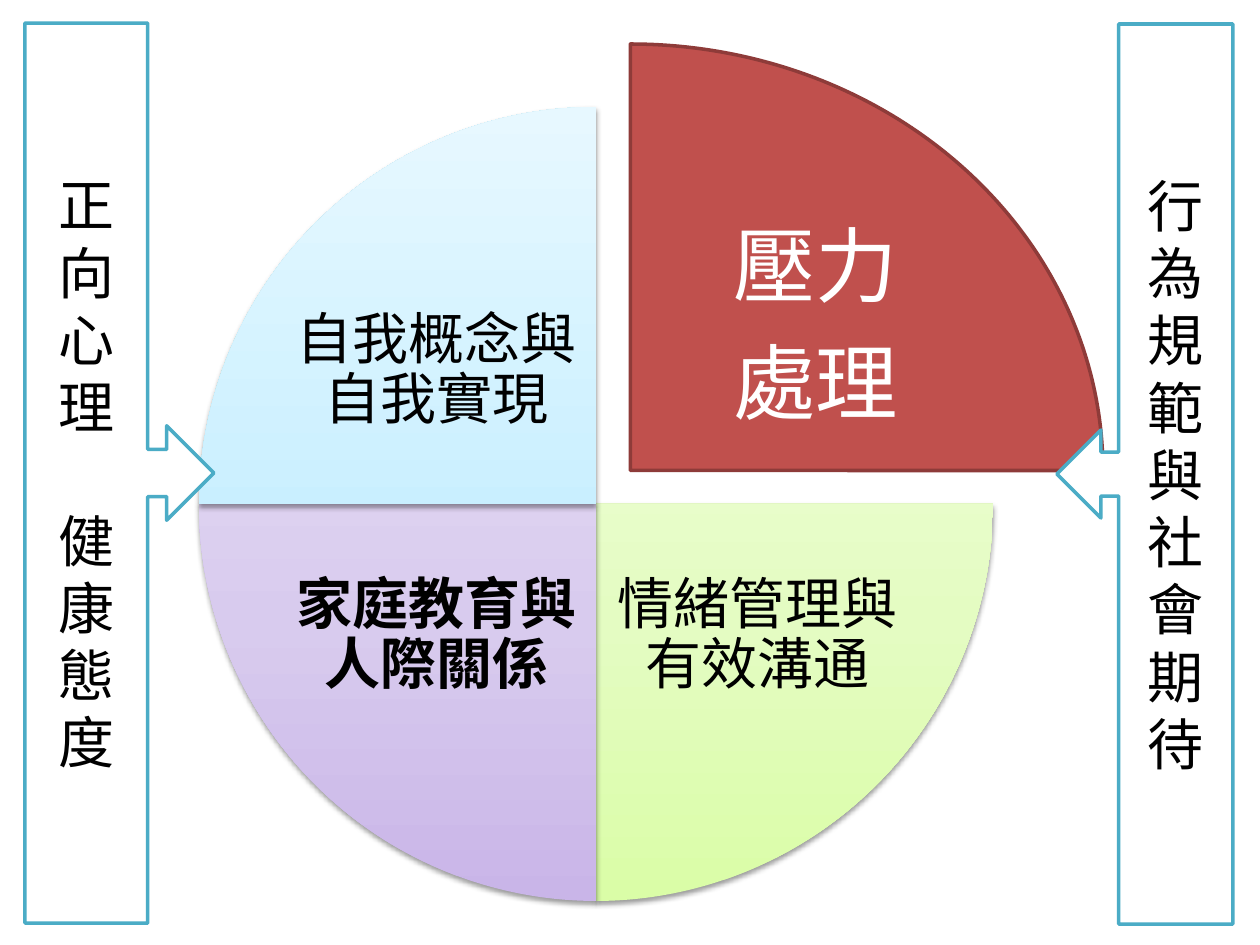
from copy import deepcopy

from lxml.etree import SubElement
from pptx import Presentation
from pptx.dml.color import RGBColor
from pptx.enum.shapes import MSO_SHAPE
from pptx.enum.text import MSO_ANCHOR, PP_ALIGN
from pptx.oxml.ns import qn
from pptx.util import Emu, Pt

EMU_PER_PX = 914400 / 126
FONT = "Noto Sans CJK SC"
COLORS = {
    "text": "000000", "white": "FFFFFF", "shadow": "000000",
    "callout": "4BACC6", "stress": "C0504D", "stress_edge": "8E3B39",
}
GRADIENTS = {
    "green": ("DAFDA7", "E4FCC2", "F5FFE7"),
    "purple": ("C9B5E8", "D8CBEE", "F0EAF9"),
    "blue": ("A7E6FF", "C1EDFF", "E7F8FF"),
}
STOPS = (0, 0.35, 1)
# gradient, start and end angle in 100000ths, label offset in the wheel, label, bold
QUADRANTS = (
    ("green", 0, 54, (412, 411), "情緒管理與有效溝通", False),
    ("purple", 54, 108, (91, 411), "家庭教育與人際關係", True),
    ("blue", 108, 162, (91, 146), "自我概念與自我實現", False),
)


def px(*values):
    return [Emu(round(v * EMU_PER_PX)) for v in values]


def rgb(name):
    return RGBColor.from_string(COLORS[name])


def write(sp, lines, inset=None, font=None, para=None):
    """Fill a shape with centred paragraphs, one for each line."""
    tf = sp.text_frame
    tf.word_wrap = True
    tf.vertical_anchor = MSO_ANCHOR.MIDDLE
    if inset is not None:
        for side in ("left", "top", "right", "bottom"):
            setattr(tf, f"margin_{side}", px(inset)[0])
    font = {"size": Pt(32), "name": FONT, "bold": False, **(font or {})}
    color = font.pop("color", "text")
    for i, line in enumerate(lines):
        p = tf.paragraphs[0] if i == 0 else tf.add_paragraph()
        for name, value in {"alignment": PP_ALIGN.CENTER, **(para or {})}.items():
            setattr(p, name, value)
        r = p.add_run()
        r.text = line
        for name, value in font.items():
            setattr(r.font, name, value)
        r.font.color.rgb = rgb(color)
        SubElement(r.font._element, qn("a:ea"), typeface=FONT)


def add_outlined(s, kind, box, fill, line):
    sp = s.shapes.add_shape(kind, *px(*box))
    sp.shadow.inherit = False
    sp.fill.solid()
    sp.fill.fore_color.rgb = rgb(fill)
    sp.line.color.rgb = rgb(line)
    sp.line.width = Pt(2)
    return sp


def set_angles(sp, start, end):
    sp.adjustments[0], sp.adjustments[1] = start, end


def set_gradient(sp, colors):
    sp.fill.gradient()
    sp.fill.gradient_angle = 90
    stops = sp._element.spPr.find(f".//{qn('a:gsLst')}")
    stops.append(deepcopy(stops[0]))
    for stop, position, color in zip(sp.fill.gradient_stops, STOPS, colors):
        stop.position = position
        stop.color.rgb = RGBColor.from_string(color)


def add_shadow(sp):
    sp.shadow.inherit = False
    effects = sp._element.spPr.find(qn("a:effectLst"))
    shadow = SubElement(effects, qn("a:outerShdw"), blurRad=str(Pt(3.1)),
                        dist=str(Pt(1.6)), dir="5400000", rotWithShape="0")
    color = SubElement(shadow, qn("a:srgbClr"), val=COLORS["shadow"])
    SubElement(color, qn("a:alpha"), val="38000")


def add_label(s, box, lines, inset, **font):
    size = font.get("size", Pt(32))
    sp = s.shapes.add_textbox(*px(*box))
    write(sp, lines, inset, font,
          {"line_spacing": 0.9, "space_after": Pt(round(size.pt * 0.35, 1))})


def add_wheel(s, box):
    """Draw the four quadrants, with the stress one larger and pulled out."""
    x, y, w, h = box
    sp = add_outlined(s, MSO_SHAPE.PIE, (x - 41, y - 63, 945, 853),
                      "stress", "stress_edge")
    set_angles(sp, 162, 0)
    add_label(s, (x + 442, y + 95, 349, 253), ("壓力", "處理"), 9,
              size=Pt(47), color="white")
    for gradient, start, end, (dx, dy), label, bold in QUADRANTS:
        sp = s.shapes.add_shape(MSO_SHAPE.PIE, *px(x, y, w, h))
        set_angles(sp, start, end)
        set_gradient(sp, GRADIENTS[gradient])
        sp.line.fill.background()
        add_shadow(sp)
        add_label(s, (x + dx, y + dy, 294, 237), (label,), 5, bold=bold)


def add_callout(s, kind, box, phrases):
    """Draw an arrow callout with one character a line and a gap between phrases."""
    sp = add_outlined(s, kind, box, "white", "callout")
    write(sp, "".join(phrases))
    start = 0
    for phrase in phrases[:-1]:
        start += len(phrase)
        sp.text_frame.paragraphs[start].space_before = Pt(38)


def main():
    prs = Presentation()
    prs.slide_width, prs.slide_height = px(1260, 945)
    s = prs.slides.add_slide(prs.slide_layouts[6])
    add_wheel(s, (199, 107, 794, 794))
    add_callout(s, MSO_SHAPE.RIGHT_ARROW_CALLOUT, (25, 23, 189, 900),
                ("正向心理", "健康態度"))
    add_callout(s, MSO_SHAPE.LEFT_ARROW_CALLOUT, (1057, 24, 176, 900),
                ("行為規範與社會期待",))
    prs.save("out.pptx")


if __name__ == "__main__":
    main()
